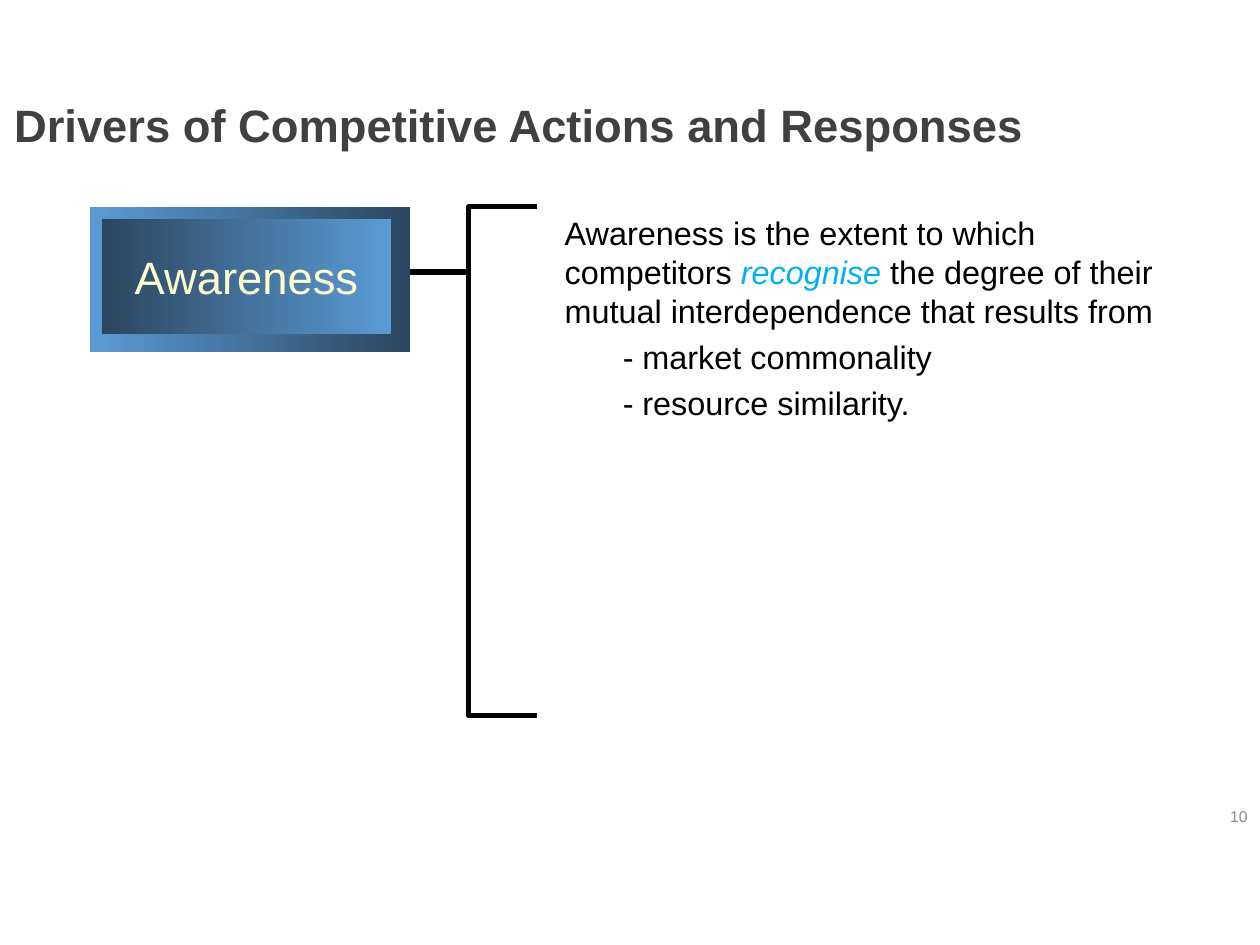
"""Build the slide on awareness as a driver of competitive actions."""
from dataclasses import dataclass

from pptx import Presentation
from pptx.dml.color import RGBColor
from pptx.enum.shapes import MSO_SHAPE
from pptx.enum.text import MSO_ANCHOR, MSO_AUTO_SIZE, PP_ALIGN
from pptx.oxml.ns import qn
from pptx.util import Cm, Pt

RECTANGLE, LEFT_BRACE = MSO_SHAPE.RECTANGLE, MSO_SHAPE.LEFT_BRACE
TOP, MIDDLE = MSO_ANCHOR.TOP, MSO_ANCHOR.MIDDLE
LEFT, CENTER, RIGHT = PP_ALIGN.LEFT, PP_ALIGN.CENTER, PP_ALIGN.RIGHT
NO_AUTOFIT = MSO_AUTO_SIZE.NONE


@dataclass(frozen=True)
class Theme:
    font: str = "Arial"
    heading_size: float = 25.9
    body_size: float = 18.5
    number_size: float = 9
    title: str = "404040"
    body: str = "000000"
    emphasis: str = "00B0F0"
    label: str = "FFFFCC"
    number: str = "8C8C8C"
    light: str = "5B9BD5"
    dark: str = "2B4660"


THEME = Theme()

TITLE = "Drivers of Competitive Actions and Responses"
DRIVER = "Awareness"
PAGE_NUMBER = "10"
DEFINITION = [
    ("Awareness is the extent to which competitors ", False),
    ("recognise", True),
    (" the degree of their mutual interdependence that results from", False),
]
SOURCES = ["- market commonality", "- resource similarity."]

AREAS = {
    "title": (0.03, 1.9, 21.59, 1.37),
    "number": (24.15, 16.1, 1.25, 0.69),
    "brace": (8.08, 4.17, 2.74, 10.26),
    "body": (11.13, 4.17, 12.7, 4.52),
    "frame": (1.81, 4.17, 6.45, 2.92),
    "panel": (2.06, 4.42, 5.82, 2.31),
}


def area(name):
    return [Cm(length) for length in AREAS[name]]


def place(box, name, anchor):
    box.left, box.top, box.width, box.height = area(name)
    frame = box.text_frame
    frame.word_wrap = True
    frame.auto_size = NO_AUTOFIT
    frame.vertical_anchor = anchor
    return frame


def write(para, text, *, size, color, bold=False, italic=False, align=LEFT):
    para.alignment = align
    span = para.add_run()
    span.text = text
    font = span.font
    font.name, font.size = THEME.font, Pt(size)
    font.bold, font.italic = bold, italic
    font.color.rgb = RGBColor.from_string(color)


def plain_paragraph(para, indent=0, before=0):
    properties = para._p.get_or_add_pPr()
    properties.set("marL", str(Cm(indent)))
    properties.set("indent", "0")
    properties.append(properties.makeelement(qn("a:buNone"), {}))
    para.space_before = Pt(before)


def add_gradient_box(group, name, colors):
    box = group.shapes.add_shape(RECTANGLE, *area(name))
    box.shadow.inherit = False
    box.line.fill.background()
    box.fill.gradient()
    box.fill.gradient_angle = 0
    for stop, position, color in zip(box.fill.gradient_stops, (0, 1), colors):
        stop.position = position
        stop.color.rgb = RGBColor.from_string(color)
    return box


def add_brace(page):
    brace = page.shapes.add_shape(LEFT_BRACE, *area("brace"))
    brace.adjustments[0], brace.adjustments[1] = 0, 0.128
    brace.shadow.inherit = False
    brace.fill.background()
    brace.line.color.rgb = RGBColor.from_string(THEME.body)
    brace.line.width = Pt(3)


def add_driver(page):
    group = page.shapes.add_group_shape()
    add_gradient_box(group, "frame", (THEME.light, THEME.dark))
    panel = add_gradient_box(group, "panel", (THEME.dark, THEME.light))
    frame = place(panel, "panel", MIDDLE)
    write(frame.paragraphs[0], DRIVER, size=THEME.heading_size,
          color=THEME.label, align=CENTER)


def fill_body(box):
    frame = place(box, "body", TOP)
    para = frame.paragraphs[0]
    plain_paragraph(para)
    for text, stressed in DEFINITION:
        write(para, text, size=THEME.body_size, italic=stressed,
              color=THEME.emphasis if stressed else THEME.body)
    for text in SOURCES:
        para = frame.add_paragraph()
        para.level = 1
        plain_paragraph(para, indent=1.17, before=4)
        write(para, text, size=THEME.body_size, color=THEME.body)


def main():
    deck = Presentation()
    deck.slide_width, deck.slide_height = Cm(25.4), Cm(19.05)
    page = deck.slides.add_slide(deck.slide_layouts[1])

    heading = place(page.shapes.title, "title", MIDDLE).paragraphs[0]
    heading.line_spacing = 0.9
    write(heading, TITLE, size=THEME.heading_size, color=THEME.title, bold=True)

    fill_body(page.placeholders[1])
    add_brace(page)
    add_driver(page)

    number = place(page.shapes.add_textbox(*area("number")), "number", MIDDLE)
    write(number.paragraphs[0], PAGE_NUMBER, size=THEME.number_size,
          color=THEME.number, align=RIGHT)
    deck.save("out.pptx")


if __name__ == "__main__":
    main()
